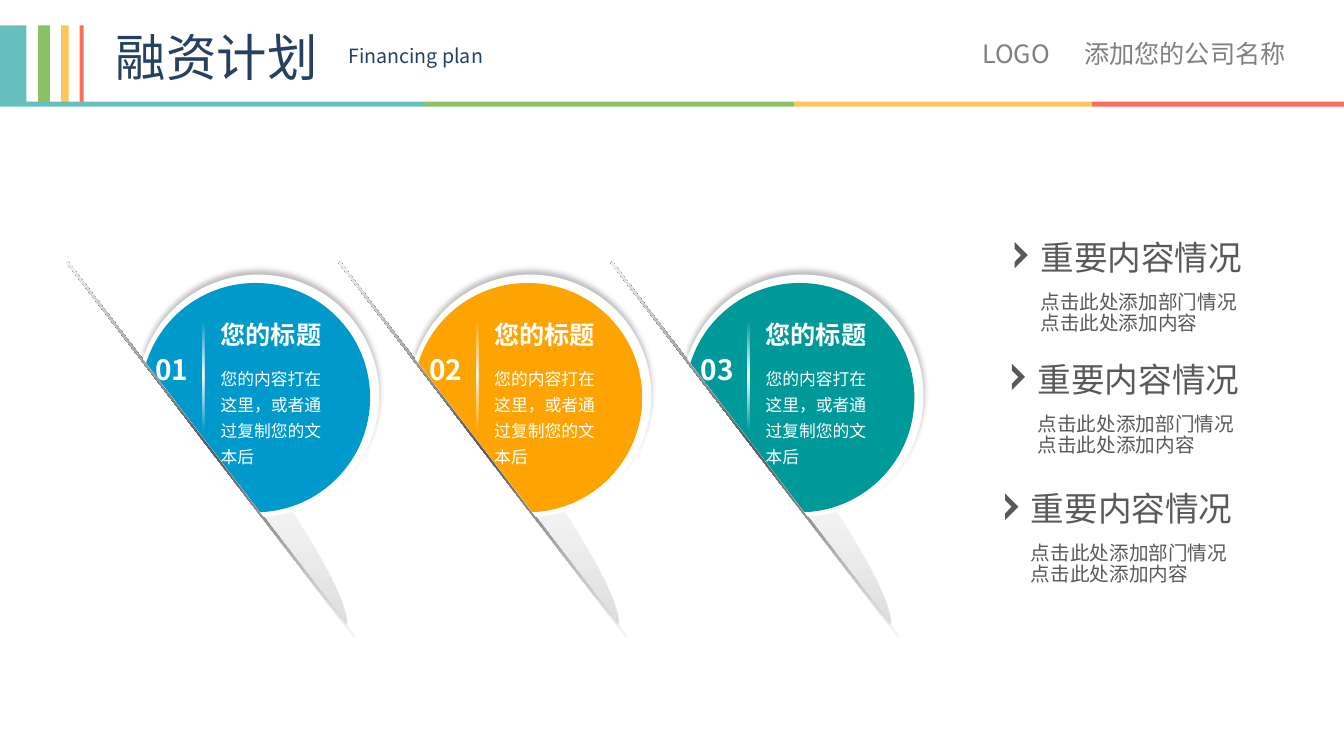
from dataclasses import dataclass
from itertools import pairwise
from math import cos, radians, sin, tan

from lxml import etree
from pptx import Presentation
from pptx.dml.color import RGBColor
from pptx.enum.shapes import MSO_SHAPE
from pptx.enum.text import MSO_ANCHOR, PP_ALIGN
from pptx.oxml.ns import qn
from pptx.util import Cm, Pt

RECTANGLE = MSO_SHAPE.RECTANGLE
TOP = MSO_ANCHOR.TOP
LEFT = PP_ALIGN.LEFT
FONT = "Noto Sans CJK SC"
NAVY, GREY, DARK, WHITE = "254061", "808080", "595959", "FFFFFF"
HEADER_COLOURS = ["66BFBC", "8CC066", "FBC75D", "FC6E5B"]
LINE_STOPS = [(2, "F2F2F2", 100), (50, DARK, 100), (100, "F2F2F2", 100)]
TAIL_STOPS = [(26, "F2F2F2", 0), (100, GREY, 27)]
DIVIDER_STOPS = [(2, WHITE, 0), (50, WHITE, 100), (100, WHITE, 0)]
TAIL_CORNERS = [(0, 0), (3.99, 3.99), (6.78, 8.86)]
TAIL_HANDLES = [[(0.56, 0.05), (2.24, 1.73)], [(5.72, 6.25), (6.88, 8.31)]]
CHEVRON = [(0, 0), (0.33, 0.33), (0, 0.66), (0, 0.5), (0.16, 0.33), (0, 0.17)]
DISC_ANGLES = [radians(angle) for angle in (197.6, 270, 360, 447.6)]


@dataclass
class Box:
    left: float
    top: float
    width: float = 0
    height: float = 0

    def inner(self, left, top, width=0, height=0):
        return Box(self.left + left, self.top + top, width, height)

    def lengths(self):
        return [Cm(value) for value in (self.left, self.top, self.width, self.height)]


def colour(value):
    return RGBColor.from_string(value)


def paint(shape, fill):
    shape.shadow.inherit = False
    shape.line.fill.background()
    if isinstance(fill, str):
        shape.fill.solid()
        shape.fill.fore_color.rgb = colour(fill)
        return
    shape.fill.gradient()
    shape.fill.gradient_angle = 270
    stops = shape._element.spPr.find(qn("a:gradFill")).find(qn("a:gsLst"))
    for stop in list(stops):
        stops.remove(stop)
    for position, value, opacity in fill:
        stop = etree.SubElement(stops, qn("a:gs"), pos=str(position * 1000))
        tone = etree.SubElement(stop, qn("a:srgbClr"), val=value)
        etree.SubElement(tone, qn("a:alpha"), val=str(opacity * 1000))


def add_bar(page, box, fill):
    bar = page.shapes.add_shape(RECTANGLE, *box.lengths())
    paint(bar, fill)
    return bar


def add_outline(page, box, corners, fill, handles=()):
    placed = [(Cm(box.left + x), Cm(box.top + y)) for x, y in corners]
    builder = page.shapes.build_freeform(*placed[0])
    builder.add_line_segments(placed[1:], close=True)
    outline = builder.convert_to_shape()
    sides = list(outline._element.spPr.iter(qn("a:lnTo")))
    for side, controls in zip(sides, handles):
        curve = etree.Element(qn("a:cubicBezTo"))
        for x, y in controls:
            etree.SubElement(curve, qn("a:pt"),
                             x=str(Cm(box.left + x) - outline.left),
                             y=str(Cm(box.top + y) - outline.top))
        curve.append(side[0])
        side.getparent().replace(side, curve)
    paint(outline, fill)
    return outline


def write(shape, lines, size, value, bold=False, spacing=None, tab=None):
    frame = shape.text_frame
    for name, setting in {"word_wrap": True, "vertical_anchor": TOP}.items():
        setattr(frame, name, setting)
    for index, line in enumerate(lines):
        para = frame.add_paragraph() if index else frame.paragraphs[0]
        for name, setting in {"alignment": LEFT, "line_spacing": spacing}.items():
            setattr(para, name, setting)
        if tab:
            tabs = etree.SubElement(para._p.get_or_add_pPr(), qn("a:tabLst"))
            etree.SubElement(tabs, qn("a:tab"), pos=str(Cm(tab)), algn="l")
        span = para.add_run()
        span.text = line
        span.font.color.rgb = colour(value)
        for name, setting in {"name": FONT, "size": Pt(size), "bold": bold}.items():
            setattr(span.font, name, setting)
        etree.SubElement(span._r.get_or_add_rPr(), qn("a:ea"), typeface=FONT)


def add_text(page, box, lines, size, value, **styles):
    write(page.shapes.add_textbox(*box.lengths()), lines, size, value, **styles)


def add_header(page, box):
    title = page.shapes.title
    places = box.inner(2.67, 0.53, 9.02, 1.8).lengths()
    for name, setting in zip(("left", "top", "width", "height"), places):
        setattr(title, name, setting)
    write(title, ["融资计划"], 36, NAVY)
    add_text(page, box.inner(8.53, 0.99, 7.24, 0.86), ["Financing plan"], 14, NAVY)
    add_text(page, box.inner(24.51, 0.84, 8.43, 1.02),
             ["LOGO\t添加您的公司名称"], 18, GREY, tab=2.57)
    stripes = [(0, 0.67), (0.96, 0.3), (1.54, 0.19), (2.01, 0.1)]
    rules = pairwise([0, 10.66, 20.02, 27.53, box.width])
    page.shapes.add_group_shape([
        add_bar(page, box.inner(left, 0.64, width, 1.93), value)
        for (left, width), value in zip(stripes, HEADER_COLOURS)])
    page.shapes.add_group_shape([
        add_bar(page, box.inner(start, 2.56, end - start, 0.13), value)
        for (start, end), value in zip(rules, HEADER_COLOURS)])


def add_disc(page, centre, radius, value):
    corners = [(radius * cos(angle), radius * sin(angle)) for angle in DISC_ANGLES]
    handles = []
    for (start, end), ((x1, y1), (x2, y2)) in zip(pairwise(DISC_ANGLES), pairwise(corners)):
        reach = 4 / 3 * tan((end - start) / 4)
        handles.append([(x1 - reach * y1, y1 + reach * x1),
                        (x2 + reach * y2, y2 - reach * x2)])
    return add_outline(page, centre, corners, value, handles)


def add_shadow(shape):
    effects = shape._element.spPr.find(qn("a:effectLst"))
    shadow = etree.SubElement(effects, qn("a:outerShdw"), blurRad=str(Pt(4)),
                              dist=str(Pt(3)), dir="16200000", rotWithShape="0")
    tone = etree.SubElement(shadow, qn("a:srgbClr"), val="000000")
    etree.SubElement(tone, qn("a:alpha"), val="25000")


def add_marker(page, box, value):
    slant = add_bar(page, box.inner(-2.57, 4.42, 11.89, 0.05), LINE_STOPS)
    slant.rotation = 52.5
    slant.fill.gradient_angle = 180
    tail = add_outline(page, box, TAIL_CORNERS, TAIL_STOPS, TAIL_HANDLES)
    rim = add_disc(page, box.inner(4.57, 3.09), 3.05, WHITE)
    add_shadow(rim)
    disc = add_disc(page, box.inner(4.5, 3.14), 2.89, value)
    page.shapes.add_group_shape([slant, tail, rim, disc])


def add_label(page, box, number):
    add_bar(page, box.inner(-0.2, 0.14, 0.05, 2.79), DIVIDER_STOPS)
    add_text(page, box.inner(0, 0, 3.63, 1.02), ["您的标题"], 18, WHITE, bold=True)
    add_text(page, box.inner(0, 1.09, 3.4, 2.92),
             ["您的内容打在这里，或者通过复制您的文本后"], 12, WHITE, spacing=1.3)
    add_text(page, box.inner(-1.64, 0.84, 1.47, 1.12), [number], 20, WHITE, bold=True)


def add_point(page, box):
    add_text(page, box.inner(0, 1.4, 5.92, 1.32),
             ["点击此处添加部门情况", "点击此处添加内容"], 14, DARK, spacing=Pt(15))
    add_outline(page, box.inner(-0.4, 0.26), CHEVRON, DARK)
    add_text(page, box.inner(0, 0, 6.12, 1.27), ["重要内容情况"], 24, DARK)


def main():
    deck = Presentation()
    deck.slide_width, deck.slide_height = Cm(33.88), Cm(19.05)
    page = deck.slides.add_slide(deck.slide_layouts[5])
    add_header(page, Box(0, 0, 33.88, 2.7))
    for index, value in enumerate(["0099CC", "FDA403", "009999"]):
        add_marker(page, Box(1.94 + 6.86 * index, 6.88), value)
    for index, left in enumerate([5.31, 12.21, 19.05]):
        add_label(page, Box(left, 7.92), f"{index + 1:02}")
    for left, top in [(25.98, 5.84), (25.91, 8.91), (25.74, 12.18)]:
        add_point(page, Box(left, top))
    deck.save("out.pptx")


if __name__ == "__main__":
    main()
